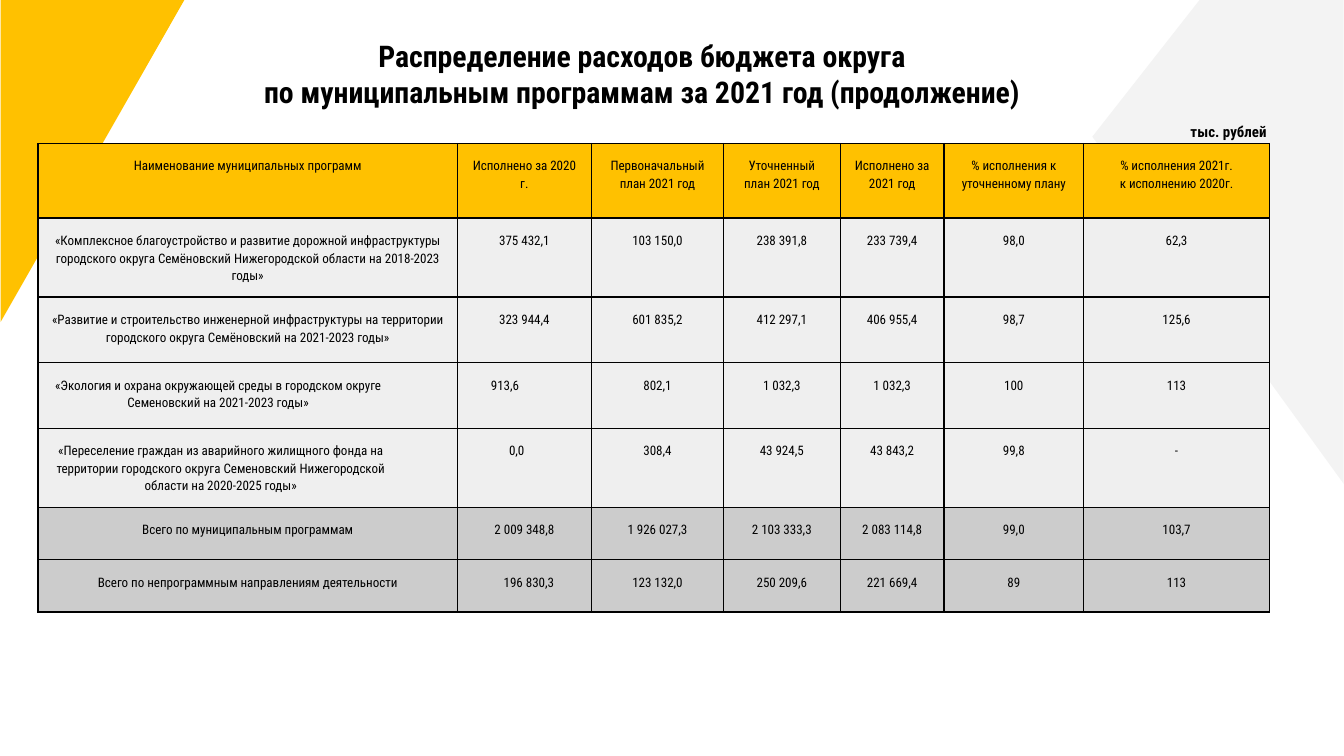
"""Build the slide on municipal programme spending for 2021."""
from dataclasses import dataclass

from lxml.etree import SubElement
from pptx import Presentation
from pptx.dml.color import RGBColor
from pptx.enum.shapes import MSO_SHAPE as Preset
from pptx.enum.text import MSO_ANCHOR as Anchor, MSO_AUTO_SIZE as AutoSize, PP_ALIGN as Align
from pptx.oxml.ns import qn
from pptx.util import Cm, Pt

FONT = "Roboto Condensed"
BLACK, YELLOW, PALE, LIGHT, GREY = "000000", "FFC100", "F3F3F3", "EFEFEF", "CCCCCC"
COLUMN_WIDTHS = (7.92, 2.54, 2.49, 2.21, 1.96, 2.64, 3.51)
INSET = 0.25


@dataclass
class Corner:
    preset: Preset
    left: float
    top: float
    width: float
    height: float
    rotation: int
    color: str


@dataclass
class BudgetRow:
    cells: tuple[str, ...]
    height: float = 1.24
    fill: str = LIGHT
    narrowed_right: float = INSET
    spent_2020_left: float = INSET


CORNERS = (
    Corner(Preset.ISOSCELES_TRIANGLE, 16.71, 0.46, 12.62, 4.75, 270, PALE),
    Corner(Preset.RIGHT_TRIANGLE, -1.3, 1.3, 6.1, 3.48, 90, YELLOW),
)

ROWS = (
    BudgetRow(("Наименование муниципальных программ", "Исполнено за 2020 г.",
               "Первоначальный план 2021 год", "Уточненный план 2021 год",
               "Исполнено за 2021 год", "% исполнения к уточненному плану",
               "% исполнения 2021г.\vк исполнению 2020г."), height=1.41, fill=YELLOW),
    BudgetRow(("«Комплексное благоустройство и развитие дорожной инфраструктуры городского округа "
               "Семёновский Нижегородской области на 2018-2023 годы»",
               "375 432,1", "103 150,0", "238 391,8", "233 739,4", "98,0", "62,3")),
    BudgetRow(("«Развитие и строительство инженерной инфраструктуры на территории городского округа "
               "Семёновский на 2021-2023 годы»",
               "323 944,4", "601 835,2", "412 297,1", "406 955,4", "98,7", "125,6")),
    BudgetRow(("«Экология и охрана окружающей среды в городском округе Семеновский на 2021-2023 годы»",
               "913,6", "802,1", "1 032,3", "1 032,3", "100", "113"), narrowed_right=1.37),
    BudgetRow(("«Переселение граждан из аварийного жилищного фонда на территории городского округа "
               "Семеновский Нижегородской области на 2020-2025 годы»",
               "0,0", "308,4", "43 924,5", "43 843,2", "99,8", "-"), narrowed_right=1.27),
    BudgetRow(("Всего по муниципальным программам", "2 009 348,8", "1 926 027,3",
               "2 103 333,3", "2 083 114,8", "99,0", "103,7"), height=0.99, fill=GREY),
    BudgetRow(("Всего по непрограммным направлениям деятельности", "196 830,3", "123 132,0",
               "250 209,6", "221 669,4", "89", "113"), height=0.99, fill=GREY,
              spent_2020_left=0.42),
)


def rgb(color: str) -> RGBColor:
    """Turn a hex string into a colour."""
    return RGBColor.from_string(color)


def write(frame, text: str, *, size: float, bold: bool = False, align=Align.CENTER,
          spacing: float = 1.0) -> None:
    """Fill a text frame with one formatted paragraph."""
    frame.word_wrap = True
    paragraph = frame.paragraphs[0]
    paragraph.text = text
    paragraph.alignment = align
    paragraph.line_spacing = spacing
    paragraph.space_before = Pt(0)
    for run in paragraph.runs:
        run.font.name = FONT
        run.font.size = Pt(size)
        run.font.bold = bold
        run.font.color.rgb = rgb(BLACK)


def set_insets(frame, inset: float) -> None:
    """Give a text frame equal insets on all sides."""
    frame.margin_left = frame.margin_right = frame.margin_top = frame.margin_bottom = Cm(inset)


def draw_corner(slide, corner: Corner) -> None:
    """Draw one decorative triangle."""
    triangle = slide.shapes.add_shape(corner.preset, Cm(corner.left), Cm(corner.top),
                                      Cm(corner.width), Cm(corner.height))
    if corner.preset == Preset.ISOSCELES_TRIANGLE:
        triangle.adjustments[0] = 0.52
    triangle.rotation = corner.rotation
    triangle.shadow.inherit = False
    triangle.fill.solid()
    triangle.fill.fore_color.rgb = rgb(corner.color)
    triangle.line.fill.background()


def add_borders(cell) -> None:
    """Put a thin black line on each side of a cell."""
    properties = cell._tc.get_or_add_tcPr()
    for position, side in enumerate(("a:lnL", "a:lnR", "a:lnT", "a:lnB")):
        border = SubElement(properties, qn(side), w=str(Pt(0.75)))
        solid = SubElement(border, qn("a:solidFill"))
        SubElement(solid, qn("a:srgbClr"), val=BLACK)
        properties.insert(position, border)


def fill_row(table, index: int, budget_row: BudgetRow) -> None:
    """Write and format one row of the budget table."""
    table.rows[index].height = Cm(budget_row.height)
    narrowed = budget_row.narrowed_right > INSET
    for column, text in enumerate(budget_row.cells):
        cell = table.cell(index, column)
        set_insets(cell, INSET)
        if column < 2:
            cell.margin_right = Cm(budget_row.narrowed_right)
        if column == 1:
            cell.margin_left = Cm(budget_row.spent_2020_left)
        cell.fill.solid()
        cell.fill.fore_color.rgb = rgb(budget_row.fill)
        add_borders(cell)
        align = Align.RIGHT if narrowed and column == 1 else Align.CENTER
        write(cell.text_frame, text, size=7, align=align, spacing=1.15)


def draw_table(slide) -> None:
    """Draw the budget table."""
    frame = slide.shapes.add_table(len(ROWS), len(COLUMN_WIDTHS), Cm(0.72), Cm(2.71),
                                   Cm(sum(COLUMN_WIDTHS)), Cm(sum(row.height for row in ROWS)))
    table = frame.table
    table.first_row = table.horz_banding = False
    for column, width in zip(table.columns, COLUMN_WIDTHS):
        column.width = Cm(width)
    for index, budget_row in enumerate(ROWS):
        fill_row(table, index, budget_row)


def draw_title(slide) -> None:
    """Place and write the slide title."""
    title = slide.shapes.title
    title.left, title.top, title.width, title.height = Cm(1.57), Cm(0.46), Cm(21.13), Cm(0.99)
    heading = title.text_frame
    heading.auto_size = AutoSize.NONE
    heading.vertical_anchor = Anchor.TOP
    set_insets(heading, INSET)
    write(heading, "Распределение расходов бюджета округа\v"
                   "по муниципальным программам за 2021 год (продолжение)", size=16, bold=True)


def draw_unit(slide) -> None:
    """Write the unit of measure above the table."""
    unit = slide.shapes.add_textbox(Cm(22.5), Cm(2.31), Cm(2.67), Cm(0.38)).text_frame
    set_insets(unit, 0)
    write(unit, "тыс. рублей", size=8, bold=True, align=Align.LEFT)


def main() -> None:
    """Build and save the presentation."""
    deck = Presentation()
    deck.slide_width, deck.slide_height = Cm(25.4), Cm(14.29)
    slide = deck.slides.add_slide(deck.slide_layouts[5])
    for corner in CORNERS:
        draw_corner(slide, corner)
    draw_table(slide)
    draw_title(slide)
    draw_unit(slide)
    deck.save("out.pptx")


if __name__ == "__main__":
    main()
